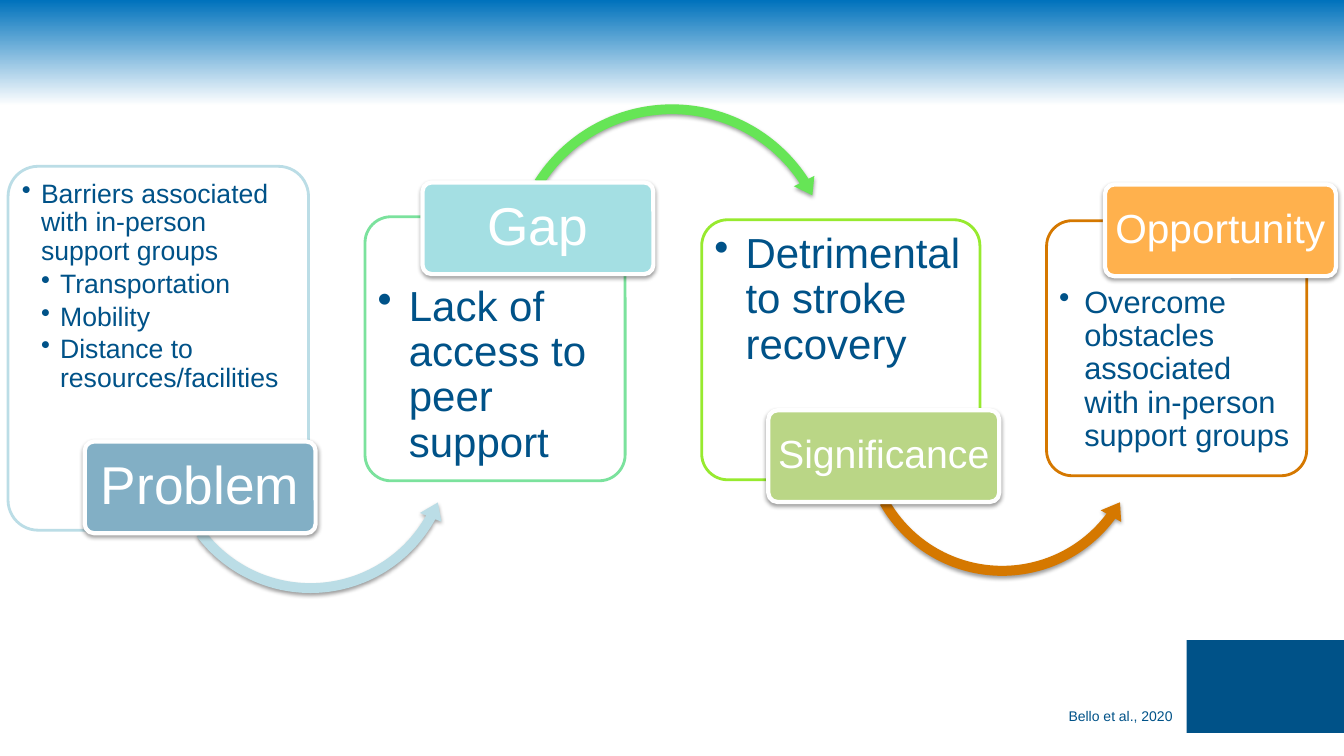
import pptx
import pptx.util
import pptx.dml.color
import pptx.enum.shapes
import pptx.enum.text
import pptx.oxml
import pptx.oxml.ns

Inches = pptx.util.Inches
Pt = pptx.util.Pt
RGBColor = pptx.dml.color.RGBColor
SHAPE = pptx.enum.shapes.MSO_SHAPE
ALIGN = pptx.enum.text.PP_ALIGN
ANCHOR = pptx.enum.text.MSO_ANCHOR
qn = pptx.oxml.ns.qn

SKY = RGBColor(0x00, 0x72, 0xBC)
NAVY = RGBColor(0x00, 0x52, 0x88)
WHITE = RGBColor(0xFF, 0xFF, 0xFF)
ICE = RGBColor(0xBB, 0xDD, 0xE6)
STEEL = RGBColor(0x82, 0xAF, 0xC5)
MINT = RGBColor(0x7B, 0xE2, 0x9D)
AQUA = RGBColor(0xA4, 0xDF, 0xE3)
GREEN = RGBColor(0x66, 0xE5, 0x56)
LIME = RGBColor(0x97, 0xEA, 0x2F)
SAGE = RGBColor(0xBA, 0xD6, 0x86)
RUST = RGBColor(0xD5, 0x78, 0x00)
AMBER = RGBColor(0xFF, 0xB1, 0x4D)

DRAW = 'xmlns:a="http://schemas.openxmlformats.org/drawingml/2006/main"'
SHADE = (
    f'<a:effectLst {DRAW}><a:outerShdw blurRad="{Pt(3.1)}" dist="{Pt(1.6)}" '
    'dir="5400000" rotWithShape="0"><a:srgbClr val="000000">'
    '<a:alpha val="38000"/></a:srgbClr></a:outerShdw></a:effectLst>'
)
CURVE_L = SHAPE.LEFT_CIRCULAR_ARROW
CURVE_R = SHAPE.CIRCULAR_ARROW


def apply(thing, form):
    for name, value in form.items():
        setattr(thing, name, value)


class Board:
    font = "Arial"

    def __init__(self, slide):
        self.slide = slide

    def back(self):
        fill = self.slide.background.fill
        fill.gradient()
        fill.gradient_angle = 270
        for stop, place, color in zip(fill.gradient_stops, (0, 0.14), (SKY, WHITE)):
            stop.position = place
            stop.color.rgb = color

    def shape(self, kind, at, fill, line=None, width=0, adjust=(), shade=False):
        item = self.slide.shapes.add_shape(kind, *map(Inches, at))
        item.fill.solid()
        item.fill.fore_color.rgb = fill
        if line is None:
            item.line.fill.background()
        else:
            item.line.color.rgb = line
            item.line.width = Pt(width)
        for place, value in enumerate(adjust):
            item.adjustments[place] = value
        item.shadow.inherit = False
        if shade:
            props = item._element.spPr
            props.replace(props.find(qn("a:effectLst")), pptx.oxml.parse_xml(SHADE))
        return item

    def label(self, para, text, size, color):
        run = para.add_run()
        run.text = text
        apply(run.font, {"name": self.font, "size": Pt(size)})
        run.font.color.rgb = color

    def frame(self, item, side, top, anchor):
        apply(item.text_frame, {
            "word_wrap": True,
            "vertical_anchor": anchor,
            "margin_left": Inches(side),
            "margin_right": Inches(side),
            "margin_top": Inches(top),
            "margin_bottom": Inches(0.05),
        })
        return item.text_frame

    def card(self, at, line, rows, size, indent, top):
        item = self.shape(SHAPE.ROUNDED_RECTANGLE, at, WHITE, line, 2, (0.1,))
        color = item._element.spPr.find(qn("a:solidFill"))[0]
        color.append(pptx.oxml.parse_xml(f'<a:alpha {DRAW} val="90000"/>'))
        frame = self.frame(item, 0.05, top, ANCHOR.TOP)
        for count, (level, text) in enumerate(rows):
            para = frame.add_paragraph() if count else frame.paragraphs[0]
            props = para._p.get_or_add_pPr()
            props.set("marL", str(Inches(indent * level)))
            props.set("indent", str(-Inches(indent)))
            props.append(pptx.oxml.parse_xml(f'<a:buChar {DRAW} char="•"/>'))
            apply(para, {
                "level": level,
                "alignment": ALIGN.LEFT,
                "line_spacing": 0.9,
                "space_after": Pt(round(size * 0.15, 1)),
            })
            self.label(para, text, size, NAVY)

    def curve(self, kind, left, top, size, color, adjust):
        self.shape(kind, (left, top, size, size), color, adjust=adjust, shade=True)

    def tag(self, left, top, color, text, size, side):
        item = self.shape(SHAPE.ROUNDED_RECTANGLE, (left, top, 2.29, 0.91),
                          color, WHITE, 3, (0.1,), True)
        para = self.frame(item, side, 0.05, ANCHOR.MIDDLE).paragraphs[0]
        apply(para, {"alignment": ALIGN.CENTER, "line_spacing": 0.9})
        self.label(para, text, size, WHITE)

    def note(self, at, text):
        box = self.slide.shapes.add_textbox(*map(Inches, at))
        box.text_frame.word_wrap = True
        self.label(box.text_frame.paragraphs[0], text, 10, NAVY)


STEPS = [
    {
        "card": ((0.08, 1.65, 2.98, 3.61), ICE, [
            (1, "Barriers associated with in-person support groups"),
            (2, "Transportation"),
            (2, "Mobility"),
            (2, "Distance to resources/facilities"),
        ], 19, 0.19, 0.05),
        "curve": (CURVE_L, 1.6, 2.99, 2.96, ICE,
                  (0.033, 4.127, 17.444, 85.807, 0.039)),
        "tag": (0.84, 4.38, STEEL, "Problem", 38, 0.08),
    },
    {
        "card": ((3.62, 2.15, 2.58, 2.62), MINT,
                 [(1, "Lack of access to peer support")], 30, 0.31, 0.6),
        "curve": (CURVE_R, 4.99, 0.97, 3.35, GREEN,
                  (0.029, 3.611, 196.24, 127.362, 0.034)),
        "tag": (4.19, 1.81, AQUA, "Gap", 38, 0.08),
    },
    {
        "card": ((6.96, 2.18, 2.76, 2.58), LIME,
                 [(1, "Detrimental to stroke recovery")], 30, 0.31, 0.05),
        "curve": (CURVE_L, 8.48, 2.86, 2.92, RUST,
                  (0.034, 4.194, 21.947, 90.243, 0.04)),
        "tag": (7.62, 4.07, SAGE, "Significance", 28, 0.06),
    },
    {
        "card": ((10.38, 2.19, 2.58, 2.53), RUST,
                 [(1, "Overcome obstacles associated with in-person support groups")],
                 22, 0.25, 0.58),
        "tag": (10.96, 1.83, AMBER, "Opportunity", 29, 0.06),
    },
]


def main():
    deck = pptx.Presentation()
    apply(deck, {"slide_width": Inches(13.33), "slide_height": Inches(7.5)})
    board = Board(deck.slides.add_slide(deck.slide_layouts[6]))
    board.back()
    board.shape(SHAPE.RECTANGLE, (11.77, 6.35, 1.56, 0.92), NAVY)
    for step in STEPS:
        if "curve" in step:
            board.card(*step["card"])
            board.curve(*step["curve"])
        else:
            board.card(*step["card"])
        board.tag(*step["tag"])
    board.note((10.5, 6.97, 2.02, 0.27), "Bello et al., 2020")
    deck.save("out.pptx")


if __name__ == "__main__":
    main()
